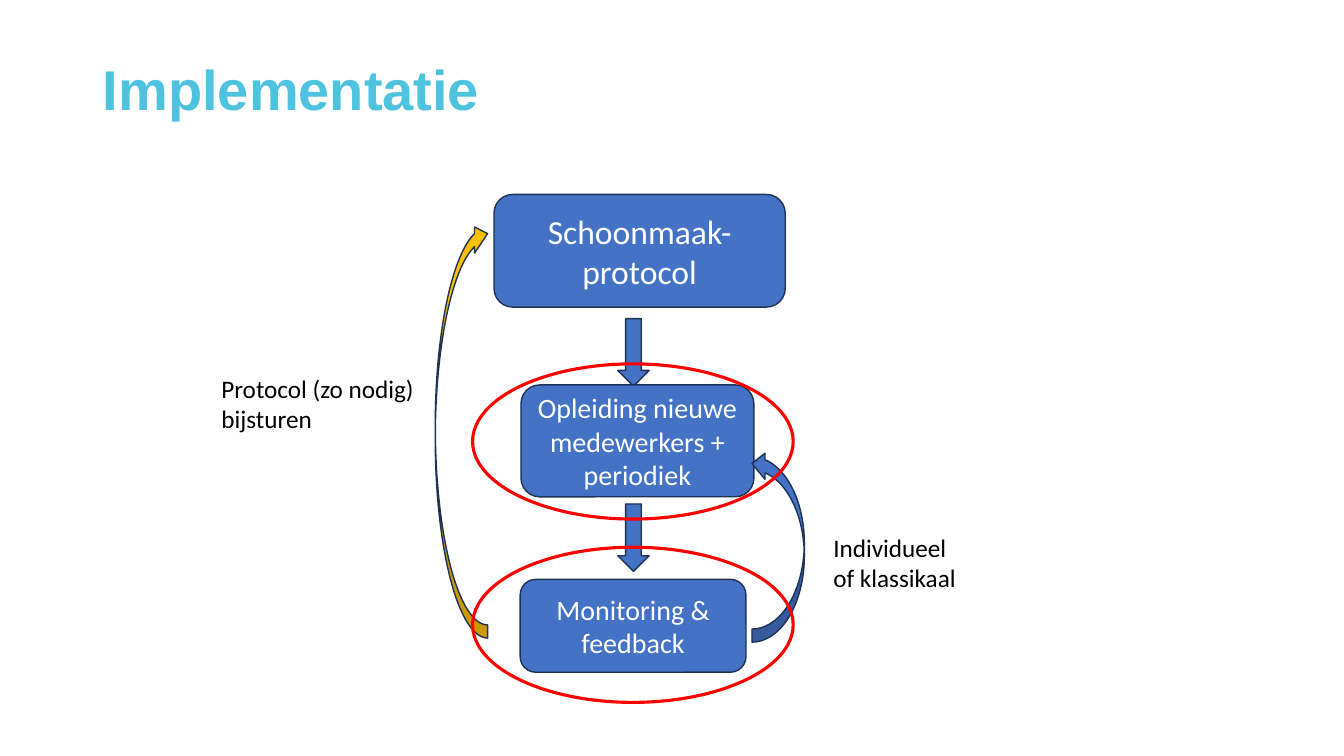
from dataclasses import dataclass
from typing import Optional

from pptx import Presentation
from pptx.dml.color import RGBColor
from pptx.enum.shapes import MSO_SHAPE as Preset
from pptx.enum.text import MSO_ANCHOR as Anchor, MSO_AUTO_SIZE as AutoSize, PP_ALIGN as Align
from pptx.oxml.ns import qn
from pptx.slide import Slide
from pptx.text.text import TextFrame
from pptx.util import Cm, Pt

BLUE = RGBColor(0x44, 0x72, 0xC4)
GOLD = RGBColor(0xFF, 0xC0, 0x00)
NAVY = RGBColor(0x1E, 0x32, 0x56)
RED = RGBColor(0xFF, 0x00, 0x00)
CYAN = RGBColor(0x4E, 0xC3, 0xE0)
WHITE = RGBColor(0xFF, 0xFF, 0xFF)
BLACK = RGBColor(0x00, 0x00, 0x00)


@dataclass(frozen=True)
class Area:
    left: float
    top: float
    width: float
    height: float

    def lengths(self) -> tuple[Cm, Cm, Cm, Cm]:
        return Cm(self.left), Cm(self.top), Cm(self.width), Cm(self.height)


@dataclass(frozen=True)
class Figure:
    preset: Preset
    area: Area
    fill: Optional[RGBColor] = BLUE
    line: RGBColor = NAVY
    line_width: float = 1
    text: str = ""
    size: int = 20
    rotation: int = 0
    flipped: bool = False


@dataclass(frozen=True)
class Remark:
    text: str
    area: Area


def down_arrow(top: float) -> Figure:
    return Figure(Preset.DOWN_ARROW, Area(15.57, top, 0.79, 1.7))


def step(text: str, area: Area, size: int = 20) -> Figure:
    return Figure(Preset.ROUNDED_RECTANGLE, area, text=text, size=size)


def highlight(top: float) -> Figure:
    return Figure(Preset.OVAL, Area(11.91, top, 8.08, 3.91), None, RED, 2.25)


FLOW = [
    step("Schoonmaak-protocol", Area(12.45, 4.9, 7.34, 2.84), 24),
    down_arrow(8.03),
    step("Opleiding nieuwe medewerkers + periodiek", Area(13.13, 9.7, 5.87, 2.82)),
    down_arrow(12.7),
    step("Monitoring & feedback", Area(13.11, 14.6, 5.69, 2.34)),
    Figure(Preset.CURVED_RIGHT_ARROW, Area(18.95, 11.35, 1.32, 4.83), rotation=180),
    Figure(Preset.CURVED_RIGHT_ARROW, Area(10.97, 5.56, 1.32, 10.52), GOLD, flipped=True),
]
REMARKS = [
    Remark("Individueel of klassikaal", Area(20.75, 13.28, 3.68, 1.8)),
    Remark("Protocol (zo nodig) bijsturen", Area(5.33, 9.27, 5.54, 1.8)),
]
HIGHLIGHTS = [highlight(9.17), highlight(13.79)]


def write(frame: TextFrame, text: str, size: int, color: RGBColor,
          align: Align = Align.LEFT, font: str = "Calibri") -> None:
    frame.text = text
    frame.word_wrap = True
    paragraph = frame.paragraphs[0]
    paragraph.alignment = align
    for run in paragraph.runs:
        run.font.name = font
        run.font.size = Pt(size)
        run.font.color.rgb = color


def draw_figure(slide: Slide, figure: Figure) -> None:
    shape = slide.shapes.add_shape(figure.preset, *figure.area.lengths())
    shape.shadow.inherit = False
    shape.rotation = figure.rotation
    if figure.flipped:
        shape._element.spPr.find(qn("a:xfrm")).set("flipV", "1")
    if figure.fill is None:
        shape.fill.background()
    else:
        shape.fill.solid()
        shape.fill.fore_color.rgb = figure.fill
    shape.line.color.rgb = figure.line
    shape.line.width = Pt(figure.line_width)
    if figure.text:
        write(shape.text_frame, figure.text, figure.size, WHITE, Align.CENTER)
        shape.text_frame.vertical_anchor = Anchor.MIDDLE


def draw_remark(slide: Slide, remark: Remark) -> None:
    box = slide.shapes.add_textbox(*remark.area.lengths())
    write(box.text_frame, remark.text, 18, BLACK)
    box.text_frame.auto_size = AutoSize.SHAPE_TO_FIT_TEXT


def draw_heading(slide: Slide) -> None:
    heading = slide.shapes.title
    heading.left, heading.top, heading.width, heading.height = Area(2.34, 1.37, 29.21, 1.93).lengths()
    frame = heading.text_frame
    write(frame, "Implementatie", 40, CYAN, font="Arial")
    frame.auto_size = AutoSize.NONE
    frame.vertical_anchor = Anchor.MIDDLE
    frame.paragraphs[0].line_spacing = 0.9
    frame.paragraphs[0].runs[0].font.bold = True


def main() -> None:
    deck = Presentation()
    deck.slide_width, deck.slide_height = Cm(33.87), Cm(19.05)
    slide = deck.slides.add_slide(deck.slide_layouts[5])
    draw_heading(slide)
    for figure in FLOW:
        draw_figure(slide, figure)
    for remark in REMARKS:
        draw_remark(slide, remark)
    for ring in HIGHLIGHTS:
        draw_figure(slide, ring)
    deck.save("out.pptx")


if __name__ == "__main__":
    main()
